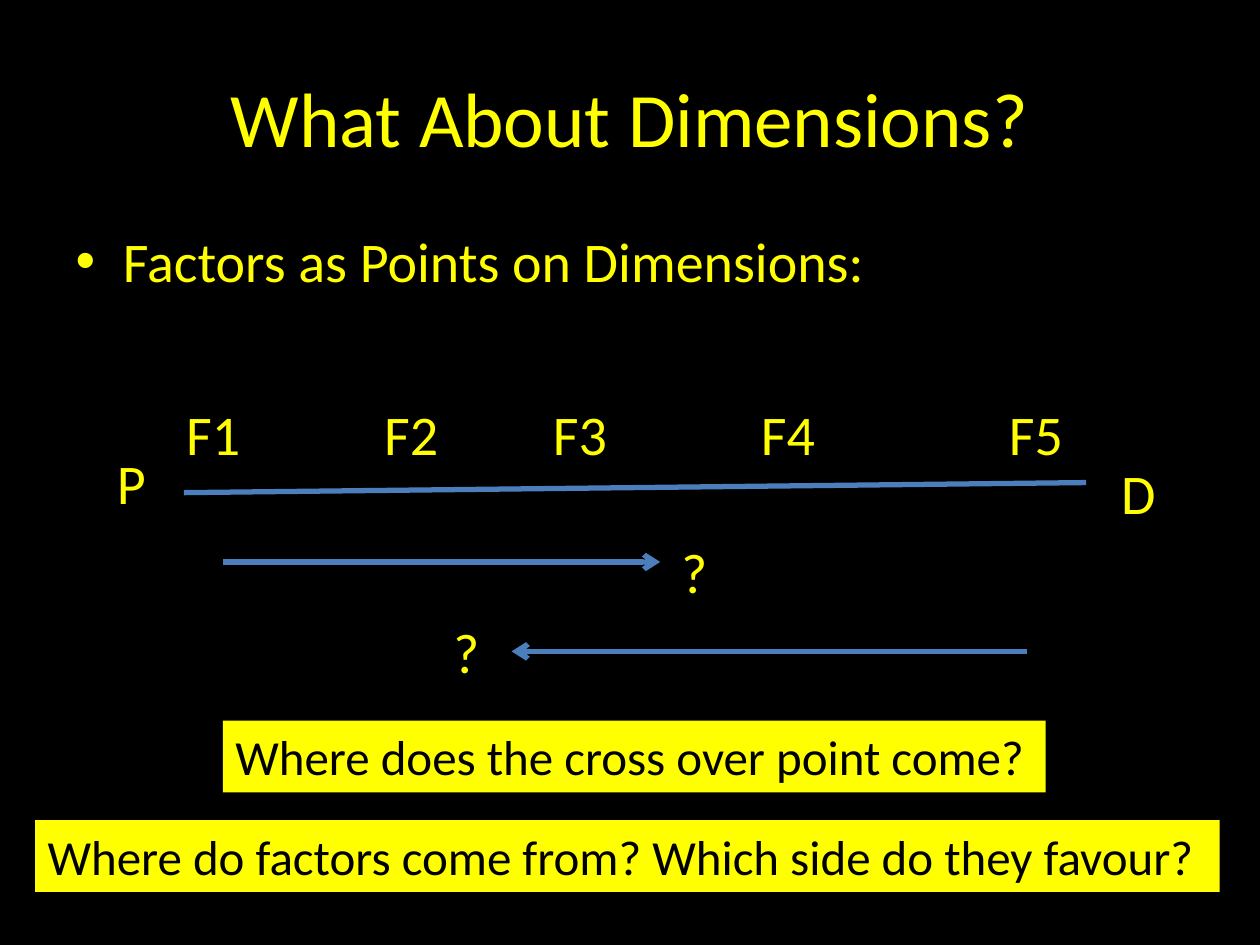
from pptx import Presentation
from pptx import util as u
from pptx.dml.color import RGBColor
from pptx.enum import shapes, text
from pptx.oxml import ns
from lxml import etree

YELLOW, BLACK, BLUE = "FFFF00", "000000", "4B7EBC"
COLUMNS, ROWS = 1000, 750

deck = Presentation()
deck.slide_width, deck.slide_height = u.Inches(10), u.Inches(7.5)
column = deck.slide_width // COLUMNS
row = deck.slide_height // ROWS
slide = deck.slides.add_slide(deck.slide_layouts[1])


def paint(fill, colour):
    fill.solid()
    fill.fore_color.rgb = RGBColor.from_string(colour)


def write(frame, wording, size, colour):
    run = frame.paragraphs[0].add_run()
    run.text = wording
    run.font.size = u.Pt(size)
    run.font.name = "Calibri"
    paint(run.font.fill, colour)


paint(slide.background.fill, BLACK)

heading, points = slide.placeholders
for holder, top, height, wording, size in [
    (heading, 30, 125, "What About Dimensions?", 44),
    (points, 175, 495, "Factors as Points on Dimensions:", 32),
]:
    holder.left, holder.top = 50 * column, top * row
    holder.width, holder.height = 900 * column, height * row
    write(holder.text_frame, wording, size, YELLOW)

for start_x, start_y, end_x, end_y, has_arrow in [
    (146, 391, 862, 383, False),
    (177, 446, 524, 446, True),
    (815, 517, 406, 517, True),
]:
    dimension = slide.shapes.add_connector(
        shapes.MSO_CONNECTOR.STRAIGHT,
        start_x * column, start_y * row, end_x * column, end_y * row)
    dimension.line.width = u.Pt(3)
    paint(dimension.line.fill, BLUE)
    if has_arrow:
        etree.SubElement(dimension.line._get_or_add_ln(), ns.qn("a:tailEnd"), type="arrow")
    etree.SubElement(dimension._element.spPr, ns.qn("a:effectLst"))

factors = [(f"F{number}", left, 312, 64)
           for number, left in enumerate([138, 295, 429, 594, 791], 1)]
ends = [("P", 83, 351, 43), ("D", 880, 359, 46)]
unknowns = [("?", 531, 422, 41), ("?", 350, 485, 41)]
for wording, left, top, width in factors + ends + unknowns:
    label = slide.shapes.add_textbox(left * column, top * row, width * column, 64 * row)
    label.text_frame.word_wrap = False
    label.text_frame.auto_size = text.MSO_AUTO_SIZE.SHAPE_TO_FIT_TEXT
    write(label.text_frame, wording, 32, YELLOW)

for wording, left, top, width in [
    ("Where does the cross over point come?", 177, 572, 653),
    ("Where do factors come from? Which side do they favour?", 28, 651, 940),
]:
    question = slide.shapes.add_textbox(left * column, top * row, width * column, 57 * row)
    paint(question.fill, YELLOW)
    question.text_frame.word_wrap = True
    question.text_frame.auto_size = text.MSO_AUTO_SIZE.SHAPE_TO_FIT_TEXT
    write(question.text_frame, wording, 28, BLACK)

deck.save("out.pptx")
